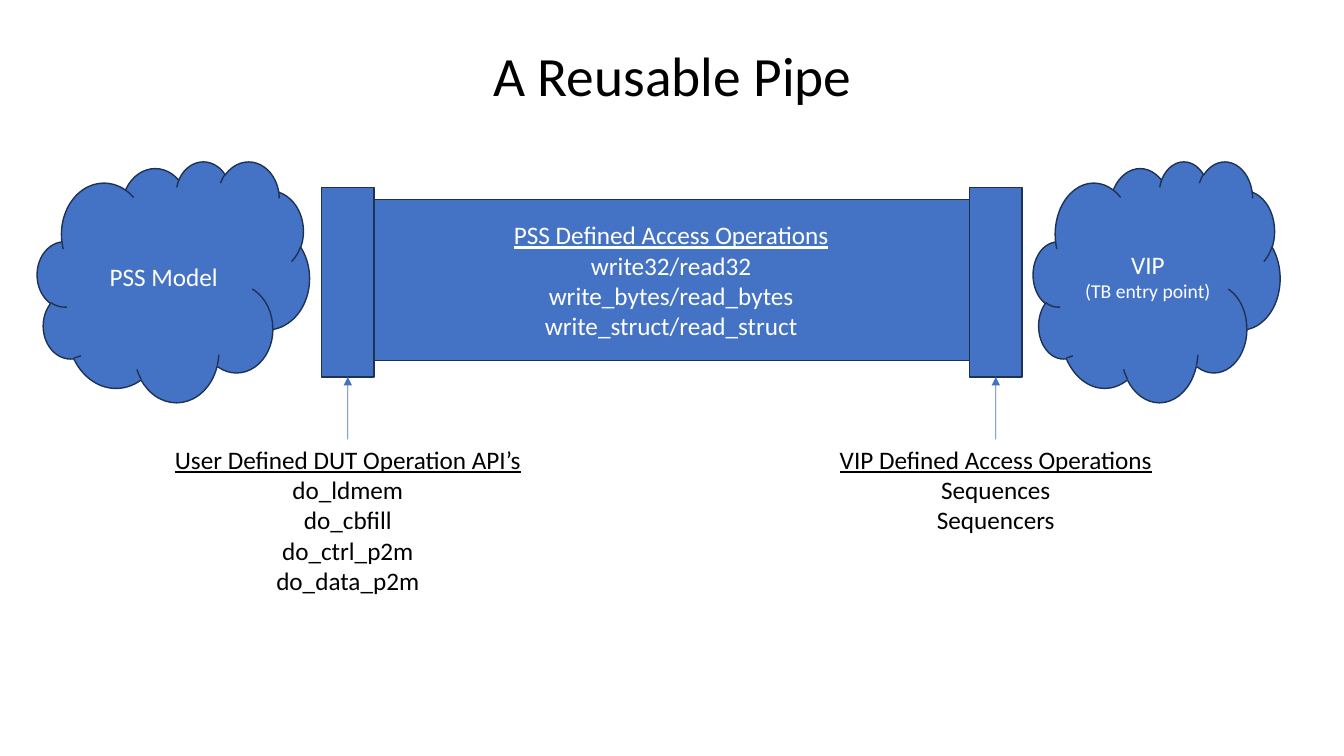
"""Build the slide that shows a reusable pipe between a PSS model and a VIP."""
import dataclasses

import lxml.etree
import pptx
import pptx.dml.color
import pptx.enum.shapes
import pptx.enum.text
import pptx.oxml.ns
import pptx.util

Cm = pptx.util.Cm
Pt = pptx.util.Pt
Kind = pptx.enum.shapes.MSO_SHAPE
Align = pptx.enum.text.PP_ALIGN
Anchor = pptx.enum.text.MSO_ANCHOR
qn = pptx.oxml.ns.qn


@dataclasses.dataclass(frozen=True)
class Theme:
    """Hold the colours, font and sizes of the slide."""
    fill: str = "4472C4"
    edge: str = "1E3256"
    dark: str = "000000"
    light: str = "FFFFFF"
    font: str = "Calibri"
    title: float = 39.6
    text: float = 18
    small: float = 14
    border: float = 1
    arrow: float = 0.5


THEME = Theme()


def tint(code):
    """Turn a hex code into a colour."""
    return pptx.dml.color.RGBColor.from_string(code)


def place(left, top, width, height):
    """Give a box in centimetres as lengths."""
    return Cm(left), Cm(top), Cm(width), Cm(height)


def write(frame, lines, color, head=False):
    """Write centred lines of (text, size), with the first underlined if it is a head."""
    for index, (text, size) in enumerate(lines):
        para = frame.paragraphs[0] if index == 0 else frame.add_paragraph()
        para.alignment = Align.CENTER
        run = para.add_run()
        run.text = text
        run.font.name = THEME.font
        run.font.size = Pt(size)
        run.font.color.rgb = tint(color)
        if head and index == 0:
            run.font.underline = True


def add_title(slide, text):
    """Fill and place the title."""
    title = slide.shapes.title
    title.left, title.top, title.width, title.height = place(2.34, 1.02, 29.21, 1.93)
    title.text_frame.vertical_anchor = Anchor.MIDDLE
    write(title.text_frame, [(text, THEME.title)], THEME.dark)
    title.text_frame.paragraphs[0].line_spacing = 0.9


def add_solid(shapes, kind, box, lines=()):
    """Add a filled shape with a thin edge."""
    shape = shapes.add_shape(kind, *place(*box))
    shape.shadow.inherit = False
    shape.fill.solid()
    shape.fill.fore_color.rgb = tint(THEME.fill)
    shape.line.color.rgb = tint(THEME.edge)
    shape.line.width = Pt(THEME.border)
    shape.text_frame.vertical_anchor = Anchor.MIDDLE
    write(shape.text_frame, lines, THEME.light)
    return shape


def add_list(slide, box, texts, color, wrap=False):
    """Add a text box with an underlined head over plain lines."""
    label = slide.shapes.add_textbox(*place(*box))
    label.text_frame.word_wrap = wrap
    label.text_frame.auto_size = pptx.enum.text.MSO_AUTO_SIZE.SHAPE_TO_FIT_TEXT
    write(label.text_frame, [(text, THEME.text) for text in texts], color, head=True)
    return label


def add_arrow(slide, start, end):
    """Join the top of one shape to the bottom of another by an arrow."""
    kind = pptx.enum.shapes.MSO_CONNECTOR.STRAIGHT
    arrow = slide.shapes.add_connector(kind, 0, 0, 0, 0)
    arrow.begin_connect(start, 0)
    arrow.end_connect(end, 2)
    arrow.line.color.rgb = tint(THEME.fill)
    arrow.line.width = Pt(THEME.arrow)
    props = arrow._element.spPr
    lxml.etree.SubElement(props.find(qn("a:ln")), qn("a:tailEnd"), type="triangle")
    lxml.etree.SubElement(props, qn("a:effectLst"))


def add_pipe(slide, lefts, top, width, height):
    """Add the pipe as a group and return its two end plates."""
    group = slide.shapes.add_group_shape()
    plates = [add_solid(group.shapes, Kind.RECTANGLE, (left, top, width, height))
              for left in lefts]
    inner = lefts[0] + width
    add_solid(group.shapes, Kind.RECTANGLE, (inner, 5.03, lefts[1] - inner, 4.06))
    return plates


def main():
    """Build and save the slide."""
    deck = pptx.Presentation()
    deck.slide_width, deck.slide_height = Cm(33.87), Cm(19.05)
    slide = deck.slides.add_slide(deck.slide_layouts[5])
    add_title(slide, "A Reusable Pipe")

    lefts, width = (8.1, 24.43), 1.33
    plates = add_pipe(slide, lefts, 4.72, width, 4.78)

    clouds = [
        (0.94, 6.86, [("PSS Model", THEME.text)]),
        (26.04, 6.22, [("VIP", THEME.text), ("(TB entry point)", THEME.small)]),
    ]
    for left, span, lines in clouds:
        add_solid(slide.shapes, Kind.CLOUD, (left, 4.06, span, 6.07), lines)

    add_list(slide, (12.65, 5.41, 8.53, 3.33), [
        "PSS Defined Access Operations", "write32/read32",
        "write_bytes/read_bytes", "write_struct/read_struct"], THEME.light)

    notes = [
        (9.32, 4.11, False, ["User Defined DUT Operation API’s", "do_ldmem",
                             "do_cbfill", "do_ctrl_p2m", "do_data_p2m"]),
        (8.53, 2.57, True, ["VIP Defined Access Operations", "Sequences",
                            "Sequencers"]),
    ]
    for left, plate, (span, height, wrap, texts) in zip(lefts, plates, notes):
        box = (left + (width - span) / 2, 11.07, span, height)
        label = add_list(slide, box, texts, THEME.dark, wrap)
        add_arrow(slide, label, plate)

    deck.save("out.pptx")


if __name__ == "__main__":
    main()
